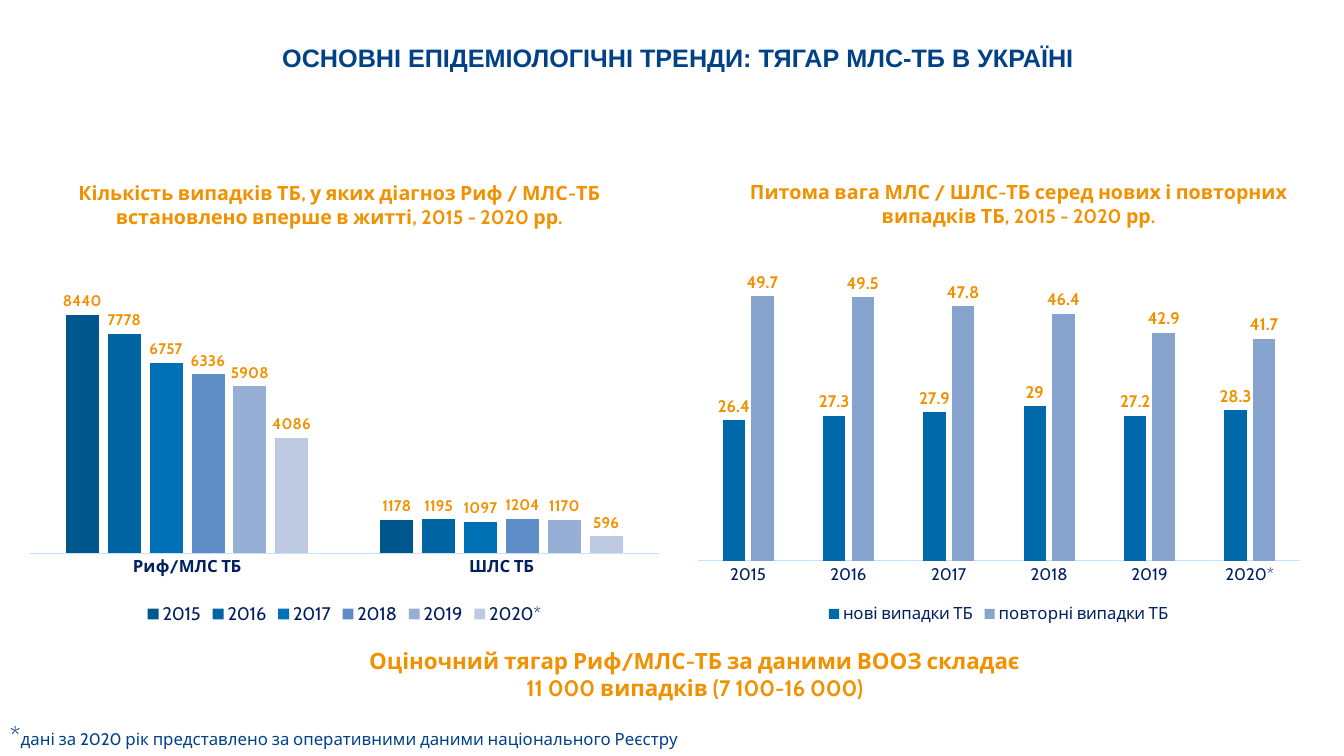
"""Build the slide on the burden of multidrug-resistant tuberculosis in Ukraine."""
from lxml.etree import SubElement
from pptx import Presentation
from pptx.chart.data import CategoryChartData
from pptx.dml.color import RGBColor
from pptx.enum.chart import XL_CHART_TYPE, XL_LABEL_POSITION, XL_LEGEND_POSITION, XL_TICK_MARK
from pptx.enum.text import MSO_ANCHOR, MSO_AUTO_SIZE, PP_ALIGN
from pptx.oxml.ns import qn
from pptx.util import Pt

COLORS = {
    "blue": "004188",
    "navy": "002060",
    "orange": "F29100",
    "axis": "C7E2FF",
}
YEARS = ["2015", "2016", "2017", "2018", "2019", "2020*"]
YEAR_COLORS = ["00578D", "0065A3", "0071B5", "5E8CC6", "97AFD4", "BDCAE2"]
CASE_COLORS = ["0069A9", "87A4CF"]
RESISTANT_CASES = [
    (8440, 1178), (7778, 1195), (6757, 1097), (6336, 1204), (5908, 1170), (4086, 596),
]
NEW_SHARE = [26.4, 27.3, 27.9, 29, 27.2, 28.3]
REPEAT_SHARE = [49.7, 49.5, 47.8, 46.4, 42.9, 41.7]


def style_font(font, size, color, bold=False, name="Cabin"):
    font.name = name
    font.size = Pt(size)
    font.bold = bold
    font.color.rgb = RGBColor.from_string(COLORS[color])


def set_title(slide, text, box):
    title = slide.shapes.title
    title.left, title.top, title.width, title.height = map(Pt, box)
    frame = title.text_frame
    frame.text = text
    frame.word_wrap = True
    frame.auto_size = MSO_AUTO_SIZE.NONE
    frame.vertical_anchor = MSO_ANCHOR.TOP
    paragraph = frame.paragraphs[0]
    paragraph.alignment = PP_ALIGN.LEFT
    paragraph.line_spacing = 0.9
    style_font(paragraph.font, 18, "blue", True, "Arial")


def add_text_frame(slide, box):
    frame = slide.shapes.add_textbox(*map(Pt, box)).text_frame
    frame.word_wrap = True
    frame.auto_size = MSO_AUTO_SIZE.SHAPE_TO_FIT_TEXT
    return frame


def add_heading(slide, text, box, size):
    frame = add_text_frame(slide, box)
    frame.text = text
    for paragraph in frame.paragraphs:
        paragraph.alignment = PP_ALIGN.CENTER
        style_font(paragraph.font, size, "orange", True)


def add_footnote(slide, mark, text, box):
    paragraph = add_text_frame(slide, box).paragraphs[0]
    for part, size in ((mark, 18), (text, 12)):
        run = paragraph.add_run()
        run.text = part
        style_font(run.font, size, "blue")


def place_plot(chart, area):
    plot_area = chart.plots[0]._element.getparent()
    for layout in plot_area.findall(qn("c:layout")):
        plot_area.remove(layout)
    layout = SubElement(plot_area, qn("c:layout"))
    plot_area.insert(0, layout)
    manual = SubElement(layout, qn("c:manualLayout"))
    settings = [("layoutTarget", "inner"), ("xMode", "edge"), ("yMode", "edge")]
    settings += zip("xywh", area)
    for tag, value in settings:
        SubElement(manual, qn(f"c:{tag}")).set("val", str(value))


def add_column_chart(slide, box, area, categories, series, colors, maximum,
                     label_size, legend_size, bold_categories=False):
    data = CategoryChartData()
    data.categories = categories
    for name, values in series:
        data.add_series(name, values)
    chart = slide.shapes.add_chart(
        XL_CHART_TYPE.COLUMN_CLUSTERED, *map(Pt, box), data).chart
    chart.has_title = False
    style_font(chart.font, 10, "blue")
    place_plot(chart, area)

    plot = chart.plots[0]
    plot.gap_width, plot.overlap, plot.vary_by_categories = 219, -27, False
    for column, color in zip(plot.series, colors):
        column.format.fill.solid()
        column.format.fill.fore_color.rgb = RGBColor.from_string(color)
        column.invert_if_negative = False
        labels = column.data_labels
        labels.show_value = True
        labels.position = XL_LABEL_POSITION.OUTSIDE_END
        style_font(labels.font, label_size, "orange", True)

    value_axis = chart.value_axis
    value_axis.visible = False
    value_axis.has_major_gridlines = False
    value_axis.minimum_scale, value_axis.maximum_scale = 0, maximum
    category_axis = chart.category_axis
    category_axis.major_tick_mark = XL_TICK_MARK.NONE
    category_axis.format.line.color.rgb = RGBColor.from_string(COLORS["axis"])
    category_axis.format.line.width = Pt(0.75)
    style_font(category_axis.tick_labels.font, 12, "navy", bold_categories)

    chart.has_legend = True
    chart.legend.position = XL_LEGEND_POSITION.BOTTOM
    chart.legend.include_in_layout = False
    style_font(chart.legend.font, legend_size, "navy")


def main():
    presentation = Presentation()
    presentation.slide_width, presentation.slide_height = Pt(960), Pt(540)
    slide = presentation.slides.add_slide(presentation.slide_layouts[5])

    set_title(slide, "ОСНОВНІ ЕПІДЕМІОЛОГІЧНІ ТРЕНДИ: ТЯГАР МЛС-ТБ В УКРАЇНІ",
              (194.4, 28.8, 688.3, 42.5))
    add_column_chart(slide, (12, 204, 468, 245), (0.02, 0.04, 0.96, 0.74),
                     ["Риф/МЛС ТБ", "ШЛС ТБ"], list(zip(YEARS, RESISTANT_CASES)),
                     YEAR_COLORS, 9000, 11, 13, bold_categories=True)
    add_heading(slide, "Кількість випадків ТБ, у яких діагноз Риф / МЛС-ТБ\n"
                "встановлено вперше в житті, 2015 - 2020 рр.", (32.4, 126, 420, 41), 14)
    add_heading(slide, "Оціночний тягар Риф/МЛС-ТБ за даними ВООЗ складає\n"
                "11 000 випадків (7 100-16 000)", (199, 458.6, 594.7, 46), 16)
    add_footnote(slide, "*", "дані за 2020 рік представлено за оперативними даними "
                 "національного Реєстру", (0, 511, 733, 29))
    add_heading(slide, "Питома вага МЛС / ШЛС-ТБ серед нових і повторних випадків ТБ, "
                "2015 - 2020 рр.", (507.6, 125.3, 440, 41), 14)
    add_column_chart(slide, (489.6, 167, 448, 281.5), (0.02, 0.02, 0.96, 0.81),
                     YEARS, [("нові випадки ТБ", NEW_SHARE),
                             ("повторні випадки ТБ", REPEAT_SHARE)],
                     CASE_COLORS, 60, 12, 12)
    presentation.save("out.pptx")


if __name__ == "__main__":
    main()
